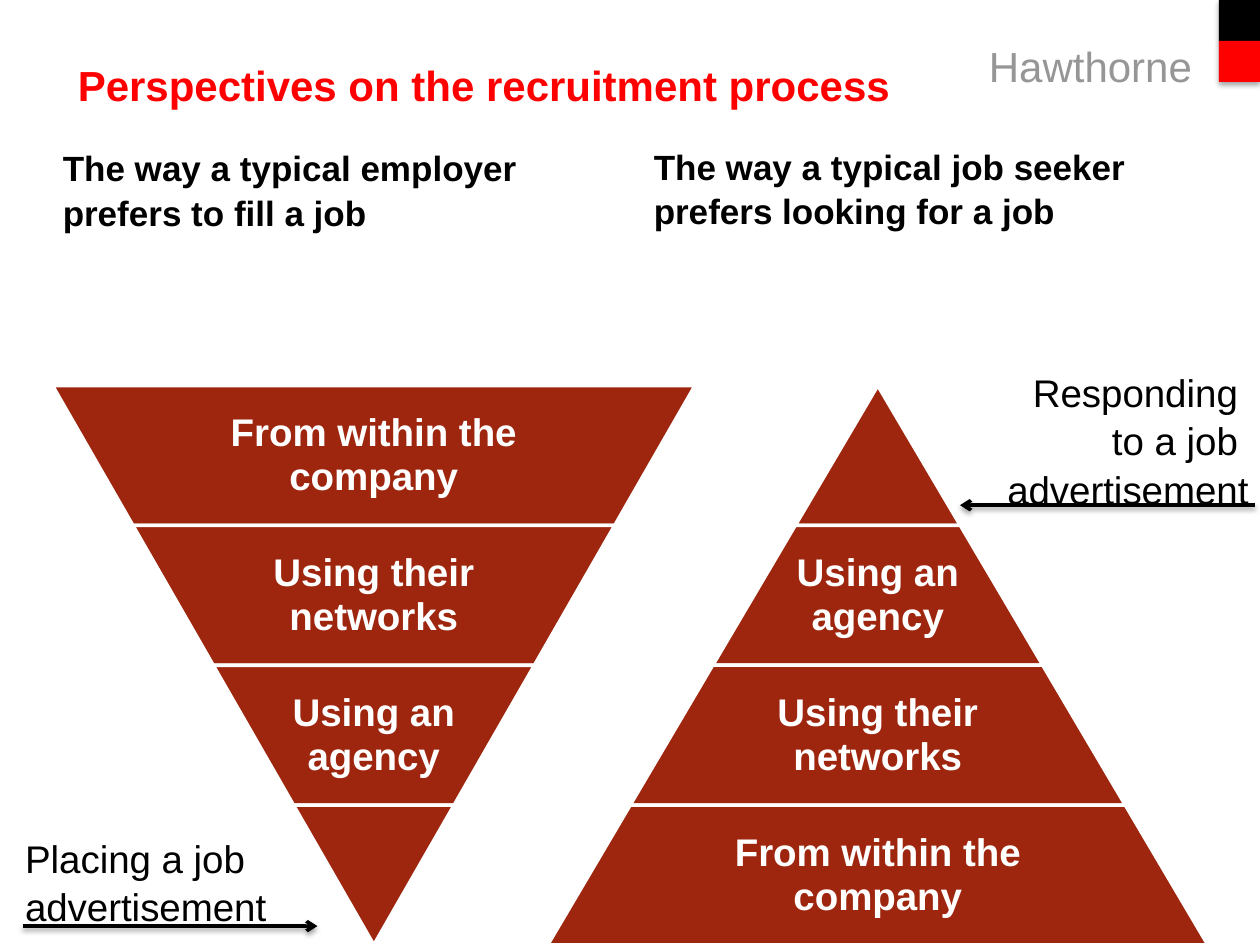
"""Build a slide that sets two recruitment pyramids side by side."""
from lxml.etree import SubElement
from pptx import Presentation
from pptx.dml.color import RGBColor
from pptx.enum.shapes import MSO_CONNECTOR, MSO_SHAPE
from pptx.enum.text import MSO_ANCHOR, PP_ALIGN
from pptx.oxml.ns import qn
from pptx.util import Pt

BLACK = RGBColor(0x00, 0x00, 0x00)
RED = RGBColor(0xFF, 0x00, 0x00)
GREY = RGBColor(0x96, 0x96, 0x96)
WHITE = RGBColor(0xFF, 0xFF, 0xFF)
RUST = RGBColor(0x9E, 0x26, 0x0E)

TOP = 220.3
TIER = 79.92
WAYS = ["From within the company", "Using their networks", "Using an agency", ""]


def add_shade(shape, alpha):
    props = shape._element.spPr
    for old in props.findall(qn("a:effectLst")):
        props.remove(old)
    shade = SubElement(SubElement(props, qn("a:effectLst")), qn("a:outerShdw"),
                       blurRad=str(Pt(3.1)), dist=str(Pt(1.7)), dir="5400000", rotWithShape="0")
    tint = SubElement(shade, qn("a:srgbClr"), val=str(BLACK))
    SubElement(tint, qn("a:alpha"), val=str(alpha * 1000))


def add_text(slide, words, box, size, color=BLACK, bold=False,
             align=PP_ALIGN.LEFT, space=1.05, before=0, wrap=True):
    frame = slide.shapes.add_textbox(*map(Pt, box)).text_frame
    frame.word_wrap = wrap
    frame.text = words
    for para in frame.paragraphs:
        para.alignment = align
        para.line_spacing = space
        para.space_before = Pt(before)
        for run in para.runs:
            run.font.name = "Arial"
            run.font.size = Pt(size)
            run.font.bold = bold
            run.font.color.rgb = color
    return frame


def add_square(slide, top, color):
    square = slide.shapes.add_shape(MSO_SHAPE.RECTANGLE, Pt(696.5), Pt(top), Pt(23.5), Pt(23.4))
    square.fill.solid()
    square.fill.fore_color.rgb = color
    square.line.fill.background()
    add_shade(square, 35)


def add_tier(slide, words, middle, top, width, inset, turn):
    tier = slide.shapes.add_shape(MSO_SHAPE.TRAPEZOID, Pt(middle - width / 2), Pt(top),
                                  Pt(width), Pt(TIER))
    tier.adjustments[0] = inset / TIER
    tier.rotation = turn
    tier.shadow.inherit = False
    tier.fill.solid()
    tier.fill.fore_color.rgb = RUST
    tier.line.color.rgb = WHITE
    tier.line.width = Pt(2)
    if words:
        span = width * 0.65
        frame = add_text(slide, words, (middle - span / 2, top, span, TIER), 22, WHITE,
                         True, PP_ALIGN.CENTER, 0.95)
        frame.vertical_anchor = MSO_ANCHOR.MIDDLE
        frame.margin_left = frame.margin_right = Pt(2.2)
        frame.margin_top = frame.margin_bottom = Pt(2.2)


def add_pyramid(slide, ways, middle, inset, turn=0):
    count = len(ways)
    for row, words in enumerate(ways):
        steps = count - row if turn else row + 1
        add_tier(slide, words, middle, TOP + row * TIER, 2 * inset * steps, inset, turn)


def add_arrow(slide, start, end, level):
    arrow = slide.shapes.add_connector(MSO_CONNECTOR.STRAIGHT, Pt(start), Pt(level),
                                       Pt(end), Pt(level))
    arrow.line.color.rgb = BLACK
    arrow.line.width = Pt(2)
    SubElement(arrow.line._get_or_add_ln(), qn("a:tailEnd"), type="arrow")
    add_shade(arrow, 38)


def main():
    deck = Presentation()
    deck.slide_width, deck.slide_height = Pt(720), Pt(540)
    slide = deck.slides.add_slide(deck.slide_layouts[6])

    add_square(slide, 0, BLACK)
    add_square(slide, 23.4, RED)
    add_text(slide, "Hawthorne", (558, 18, 132.5, 36.7), 24, GREY)
    add_text(slide, "Perspectives on the recruitment process", (37.4, 28.8, 511.2, 36),
             24, RED, True)
    add_text(slide, "The way a typical employer prefers to fill a job",
             (28.8, 79.2, 331.2, 60), 20, bold=True, before=6)
    add_text(slide, "The way a typical job seeker prefers looking for a job",
             (366.5, 78.5, 339.1, 60), 20, bold=True, before=6)

    add_pyramid(slide, WAYS, 213.6, 45.9, 180)
    add_pyramid(slide, WAYS[::-1], 501.6, 47.16)

    add_text(slide, "Placing a job\nadvertisement", (7.2, 472.3, 154, 60.5), 22, wrap=False)
    add_arrow(slide, 13, 181.4, 529.2)
    add_text(slide, "Responding \vto a job \nadvertisement", (566.6, 205.9, 154, 87.1), 22,
             align=PP_ALIGN.RIGHT, wrap=False)
    add_arrow(slide, 717.1, 548.6, 288.7)

    deck.save("out.pptx")


if __name__ == "__main__":
    main()
